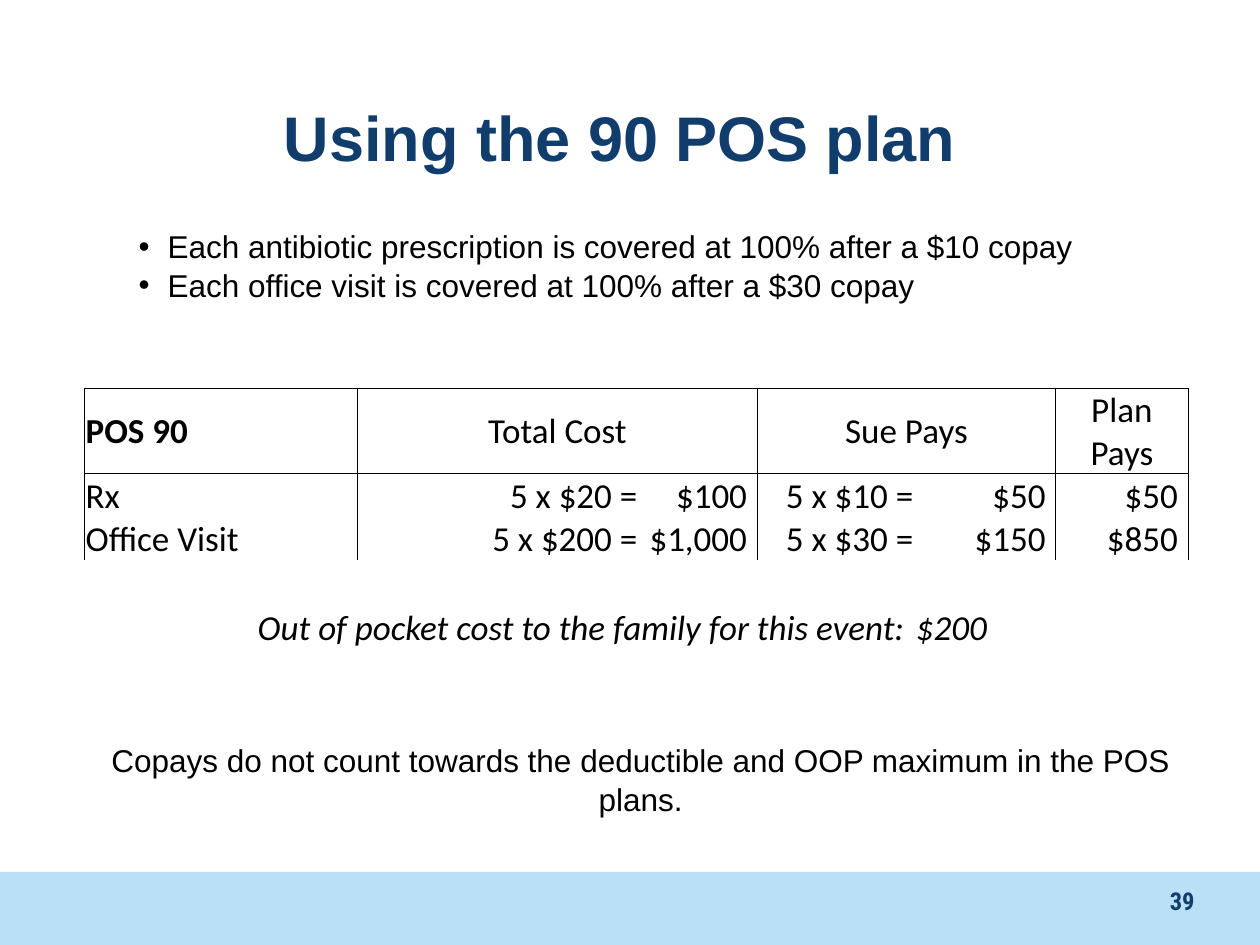
from dataclasses import dataclass

from lxml import etree
from pptx import Presentation
from pptx.dml.color import RGBColor as RGB
from pptx.enum.shapes import MSO_SHAPE as Preset
from pptx.enum.text import MSO_ANCHOR as Anchor, MSO_AUTO_SIZE as AutoSize, PP_ALIGN as Align
from pptx.oxml.ns import qn
from pptx.util import Inches, Pt


@dataclass(frozen=True)
class Theme:
    navy: RGB = RGB(0x11, 0x3D, 0x6D)
    sky: RGB = RGB(0xB9, 0xE0, 0xF7)
    ink: RGB = RGB(0, 0, 0)
    text_font: str = "Arial"
    table_font: str = "Calibri"
    number_font: str = "Roboto Condensed"
    title_size: int = 36
    body_size: int = 18
    body_leading: int = 22
    table_size: int = 20
    number_size: int = 14
    rule: float = 0.5


THEME = Theme()
COLUMNS = (2.17, 2.23, 0.94, 1.25, 1.12, 1.05)
ROWS = (0.68, 0.34, 0.34, 0.36, 0.34)
HEADINGS = {0: "POS 90", 1: "Total Cost", 3: "Sue Pays", 5: "Plan Pays"}
COSTS = (
    ("Rx", "5 x $20 =", "$100", "5 x $10 =", "$50", "$50"),
    ("Office Visit", "5 x $200 =", "$1,000", "5 x $30 =", "$150", "$850"),
)
AMOUNT_COLUMNS = (2, 4, 5)


def place(shape, box):
    shape.left, shape.top, shape.width, shape.height = map(Inches, box)


def style(paragraph, font, size, color, align=Align.LEFT, bold=False, italic=False):
    paragraph.alignment = align
    for run in paragraph.runs:
        run.font.name, run.font.size = font, Pt(size)
        run.font.color.rgb = color
        run.font.bold, run.font.italic = bold, italic


def style_body(paragraph, align=Align.LEFT):
    paragraph.space_before = Pt(0)
    paragraph.line_spacing = Pt(THEME.body_leading)
    style(paragraph, THEME.text_font, THEME.body_size, THEME.ink, align)


def add_text(slide, box, text):
    frame = slide.shapes.add_textbox(*map(Inches, box)).text_frame
    frame.word_wrap = True
    frame.text = text
    return frame.paragraphs[0]


def add_footer(slide, box, number):
    left, top, width, height = box
    band = slide.shapes.add_shape(Preset.RECTANGLE, *map(Inches, box))
    band.shadow.inherit = False
    band.fill.solid()
    band.fill.fore_color.rgb = THEME.sky
    band.line.fill.background()
    page = add_text(slide, (left + width - 2.75, top + 0.06, 2.33, height - 0.06), number)
    style(page, THEME.number_font, THEME.number_size, THEME.navy, Align.RIGHT, bold=True)


def fill_title(slide, box, text):
    title = slide.shapes.title
    place(title, box)
    frame = title.text_frame
    frame.text = text
    frame.auto_size = AutoSize.NONE
    frame.vertical_anchor = Anchor.MIDDLE
    style(frame.paragraphs[0], THEME.text_font, THEME.title_size, THEME.navy,
          Align.CENTER, bold=True)


def fill_bullets(slide, box, lines):
    body = slide.placeholders[1]
    place(body, box)
    frame = body.text_frame
    frame.text = "\n".join(lines)
    frame.auto_size = AutoSize.NONE
    for paragraph in frame.paragraphs:
        props = paragraph._p.get_or_add_pPr()
        props.set("marL", str(Inches(0.23)))
        props.set("indent", str(-Inches(0.23)))
        etree.SubElement(props, qn("a:buChar"), char="•")
        style_body(paragraph)


def set_borders(cell, sides):
    """Rule the named sides (of L, R, T, B) and leave the others open."""
    props = cell._tc.get_or_add_tcPr()
    for side in "LRTB":
        line = etree.SubElement(props, qn(f"a:ln{side}"), w=str(Pt(THEME.rule)))
        if side in sides:
            solid = etree.SubElement(line, qn("a:solidFill"))
            etree.SubElement(solid, qn("a:srgbClr"), val=str(THEME.ink))
        else:
            etree.SubElement(line, qn("a:noFill"))
    cell.fill.background()


def set_cell(cell, text, align=Align.LEFT, gap=0.01, **emphasis):
    cell.text = text
    cell.margin_right = Inches(gap)
    style(cell.text_frame.paragraphs[0], THEME.table_font, THEME.table_size,
          THEME.ink, align, **emphasis)


def add_cost_table(slide, box):
    table = slide.shapes.add_table(len(ROWS), len(COLUMNS), *map(Inches, box)).table
    table.first_row = table.horz_banding = False
    for column, width in zip(table.columns, COLUMNS):
        column.width = Inches(width)
    for row, height in zip(table.rows, ROWS):
        row.height = Inches(height)

    # Frame: each heading group is boxed, the summary row is open
    row_sides = ("TB", "T", "B", "", "")
    column_sides = ("LR", "L", "R", "L", "R", "LR")
    for r, across in enumerate(row_sides):
        for c, down in enumerate(column_sides):
            cell = table.cell(r, c)
            cell.vertical_anchor = Anchor.MIDDLE
            cell.margin_left = cell.margin_right = cell.margin_top = Inches(0.01)
            cell.margin_bottom = 0
            set_borders(cell, across + down if across else "")

    # Headings
    for c in (1, 3):
        table.cell(0, c).merge(table.cell(0, c + 1))
    for c, heading in HEADINGS.items():
        set_cell(table.cell(0, c), heading, Align.CENTER if c else Align.LEFT, bold=c == 0)

    # Costs
    for r, costs in enumerate(COSTS, start=1):
        for c, cost in enumerate(costs):
            set_cell(table.cell(r, c), cost, Align.RIGHT if c else Align.LEFT,
                     0.08 if c in AMOUNT_COLUMNS else 0.01)

    # Out of pocket summary
    summary = len(ROWS) - 1
    table.cell(summary, 0).merge(table.cell(summary, 3))
    set_cell(table.cell(summary, 0), "Out of pocket cost to the family for this event:",
             Align.RIGHT, 0.08, italic=True)
    set_cell(table.cell(summary, 4), "$200", italic=True)


def main():
    deck = Presentation()
    deck.slide_width, deck.slide_height = Inches(10), Inches(7.5)
    slide = deck.slides.add_slide(deck.slide_layouts[1])
    add_footer(slide, (0, 6.92, 10, 0.58), "39")
    fill_title(slide, (0.42, 0.67, 9, 0.83), "Using the 90 POS plan")
    fill_bullets(slide, (1, 1.75, 8.33, 1.01), (
        "Each antibiotic prescription is covered at 100% after a $10 copay",
        "Each office visit is covered at 100% after a $30 copay",
    ))
    add_cost_table(slide, (0.67, 3.08, sum(COLUMNS), sum(ROWS)))
    note = add_text(slide, (0.67, 5.83, 8.83, 0.71),
                    "Copays do not count towards the deductible and OOP maximum in the POS plans.")
    style_body(note, Align.CENTER)
    deck.save("out.pptx")


if __name__ == "__main__":
    main()
